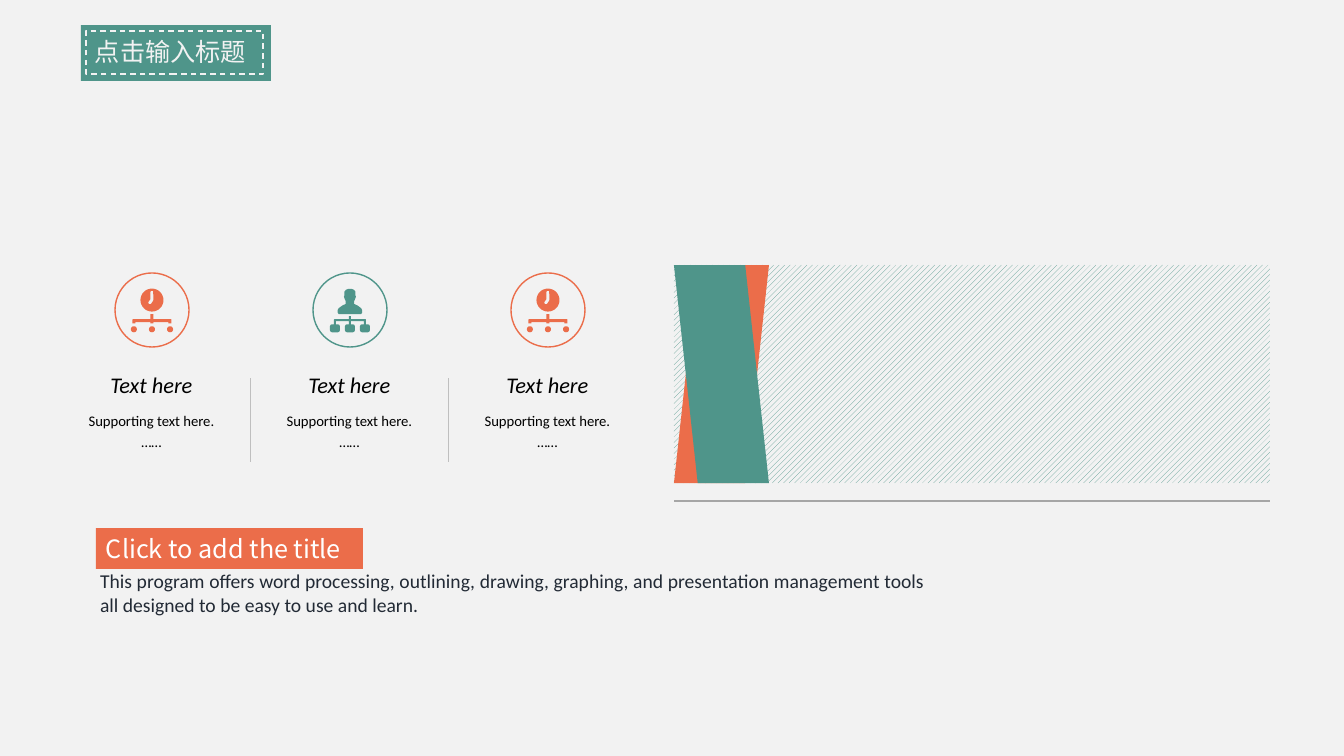
from math import cos, pi, sin

from lxml import etree
from pptx import Presentation
from pptx.dml.color import RGBColor
from pptx.enum.dml import MSO_LINE, MSO_PATTERN
from pptx.enum.shapes import MSO_CONNECTOR, MSO_SHAPE
from pptx.enum.text import MSO_ANCHOR, PP_ALIGN
from pptx.oxml.ns import qn
from pptx.util import Emu, Pt

RECTANGLE, ELLIPSE = MSO_SHAPE.RECTANGLE, MSO_SHAPE.OVAL
PARALLELOGRAM, STRAIGHT = MSO_SHAPE.PARALLELOGRAM, MSO_CONNECTOR.STRAIGHT
TOP, MIDDLE, BOTTOM = MSO_ANCHOR.TOP, MSO_ANCHOR.MIDDLE, MSO_ANCHOR.BOTTOM
LEFT, CENTER, JUSTIFY = PP_ALIGN.LEFT, PP_ALIGN.CENTER, PP_ALIGN.JUSTIFY
DASH, DIAGONAL = MSO_LINE.DASH, MSO_PATTERN.WIDE_UPWARD_DIAGONAL

EMU_PER_PX = 12192000 / 1344
ICON_UNITS_PER_PX = 10


class Theme:
    paper, white, black, navy = "F2F2F2", "FFFFFF", "000000", "222A35"
    teal, orange = "4F958A", "EB6D4A"
    divider, baseline = "BFBFBF", "A6A6A6"
    latin, chinese = "Calibri", "Noto Sans CJK SC"
    title, heading, body, caption = 18, 16, 14, 10.5


def px(length):
    return Emu(round(length * EMU_PER_PX))


def rgb(color):
    return RGBColor.from_string(color)


def set_all(target, values):
    for name, value in values.items():
        setattr(target, name, value)


def paint(shape, fill=None, line=None, dash=None):
    shape.shadow.inherit = False
    if fill:
        shape.fill.solid()
        shape.fill.fore_color.rgb = rgb(fill)
    else:
        shape.fill.background()
    if line:
        shape.line.color.rgb = rgb(line)
        set_all(shape.line, {"width": Pt(1), "dash_style": dash})
    else:
        shape.line.fill.background()


def add_block(slide, kind, box, **style):
    shape = slide.shapes.add_shape(kind, *map(px, box))
    paint(shape, **style)
    return shape


def add_line(slide, start, end, color, width):
    line = slide.shapes.add_connector(STRAIGHT, *map(px, start + end))
    line.line.color.rgb = rgb(color)
    line.line.width = Pt(width)
    etree.SubElement(line.element.spPr, qn("a:effectLst"))


def write(shape, lines, size, color, font=Theme.latin, italic=False, align=LEFT,
          anchor=TOP, spacing=1.0, insets=(10, 5)):
    side, edge = map(px, insets)
    frame = shape.text_frame
    set_all(frame, {"word_wrap": True, "vertical_anchor": anchor,
                    "margin_left": side, "margin_right": 0 if align == LEFT else side,
                    "margin_top": edge, "margin_bottom": edge})
    frame.text = "\n".join(lines)
    for paragraph in frame.paragraphs:
        set_all(paragraph, {"alignment": align, "line_spacing": spacing})
        run = paragraph.runs[0]
        set_all(run.font, {"size": Pt(size), "name": font, "italic": italic})
        run.font.color.rgb = rgb(color)
        east_asian = etree.SubElement(run.font._element, qn("a:ea"))
        east_asian.set("typeface", font)


def add_text(slide, box, lines, size, color, **style):
    write(slide.shapes.add_textbox(*map(px, box)), lines, size, color, **style)


def mirrored(right_half):
    """Close an outline by reflecting its right half, listed top to bottom."""
    return right_half + [(-x, y) for x, y in reversed(right_half)]


def circle(x, y, radius, steps=32):
    angles = [2 * pi * step / steps for step in range(steps)]
    return [(round(x + radius * cos(a)), round(y + radius * sin(a))) for a in angles]


def branches(top, reach, thickness, leg_end):
    """Outline of a stem that splits into three legs."""
    half, bar = thickness // 2, 302
    under = bar + thickness
    return mirrored([(half, top), (half, bar), (reach - 5, bar), (reach, bar + 5),
                     (reach, leg_end), (reach - thickness, leg_end),
                     (reach - thickness, under), (half, under), (half, leg_end)])


def node(x):
    """Box with cut corners at the end of a leg."""
    corners = mirrored([(30, 353), (44, 359), (50, 373), (50, 413), (44, 427), (30, 433)])
    return [(x + dx, y) for dx, y in corners]


def clock_icon():
    hand = [(-12, 20), (12, 20), (15, 110), (10, 120), (-10, 150),
            (-30, 152), (-38, 135), (-30, 120), (-15, 102), (-15, 30)]
    dots = [circle(x, 403, 30) for x in (-181, 0, 181)]
    return [circle(0, 111, 115), hand, branches(252, 195, 30, 343)] + dots


def person_icon():
    person = mirrored([(20, 0), (40, 8), (54, 25), (55, 65), (60, 75), (52, 100), (42, 122),
                       (42, 150), (75, 165), (112, 192), (122, 210), (122, 237), (112, 252)])
    nodes = [node(x) for x in (-150, 0, 150)]
    return [person, branches(272, 160, 20, 353)] + nodes


def add_icon(slide, center, top, outlines, color):
    builder = slide.shapes.build_freeform(*outlines[0][0],
                                          scale=EMU_PER_PX / ICON_UNITS_PER_PX)
    builder.add_line_segments(outlines[0][1:], close=True)
    for outline in outlines[1:]:
        builder.move_to(*outline[0])
        builder.add_line_segments(outline[1:], close=True)
    paint(builder.convert_to_shape(px(center), px(top)), fill=color)


def add_title(slide, left, top, width, height):
    add_block(slide, RECTANGLE, (left, top, width, height), fill=Theme.teal)
    add_block(slide, RECTANGLE, (left + 5, top + 6, width - 13, height - 13),
              line=Theme.paper, dash=DASH)
    add_text(slide, (left + 4, top + 6, width + 5, 40), ["点击输入标题"], Theme.title,
             Theme.paper, font=Theme.chinese, anchor=MIDDLE, insets=(10, 0))


def add_feature(slide, left, top, width, icon, color):
    ring, center = 74, left + (width + 1) // 2
    add_block(slide, ELLIPSE, (center - ring // 2, top, ring, ring), line=color)
    add_icon(slide, center, top + 16, icon, color)
    add_text(slide, (left, top + 93, width, 37), ["Text here"], Theme.heading, Theme.black,
             italic=True, align=CENTER, anchor=BOTTOM)
    add_text(slide, (left, top + 130, width, 71), ["Supporting text here.", "……"],
             Theme.caption, Theme.black, align=CENTER, spacing=1.2)


def add_features(slide, left, top, width, pitch):
    features = [(clock_icon(), Theme.orange), (person_icon(), Theme.teal),
                (clock_icon(), Theme.orange)]
    for index, (icon, color) in enumerate(features):
        column = left + index * pitch
        add_feature(slide, column, top, width, icon, color)
        if index:
            divider = column - (pitch - width) // 2 - 1
            add_line(slide, (divider, top + 105), (divider, top + 189), Theme.divider, 0.25)


def add_ribbon_panel(slide, left, top, width, height):
    panel = add_block(slide, RECTANGLE, (left, top, width, height))
    panel.fill.patterned()
    panel.fill.pattern = DIAGONAL
    panel.fill.fore_color.rgb = rgb(Theme.teal)
    panel.fill.back_color.rgb = rgb(Theme.paper)
    ribbon = (left, top, 95, height)
    add_block(slide, PARALLELOGRAM, ribbon, fill=Theme.orange)
    front = add_block(slide, PARALLELOGRAM, ribbon, fill=Theme.teal)
    front.element.spPr.find(qn("a:xfrm")).set("flipH", "1")
    rule = top + height + 18
    add_line(slide, (left + width, rule), (left, rule), Theme.baseline, 1)


def add_summary(slide, left, top, width):
    label = add_block(slide, RECTANGLE, (left, top, 267, 41), fill=Theme.orange)
    write(label, ["Click to add the title"], Theme.title, Theme.white, font=Theme.chinese,
          anchor=MIDDLE, insets=(10, 0))
    add_text(slide, (left + 4, top + 41, width, 47),
             ["This program offers word processing, outlining, drawing, graphing, and "
              "presentation management tools all designed to be easy to use and learn."],
             Theme.body, Theme.navy, align=JUSTIFY, insets=(0, 0))


def main():
    presentation = Presentation()
    set_all(presentation, {"slide_width": px(1344), "slide_height": px(756)})
    slide = presentation.slides.add_slide(presentation.slide_layouts[6])
    slide.background.fill.solid()
    slide.background.fill.fore_color.rgb = rgb(Theme.paper)
    add_features(slide, 74, 273, 155, 198)
    add_ribbon_panel(slide, 674, 265, 596, 218)
    add_title(slide, 81, 25, 190, 56)
    add_summary(slide, 96, 528, 825)
    presentation.save("out.pptx")


if __name__ == "__main__":
    main()
